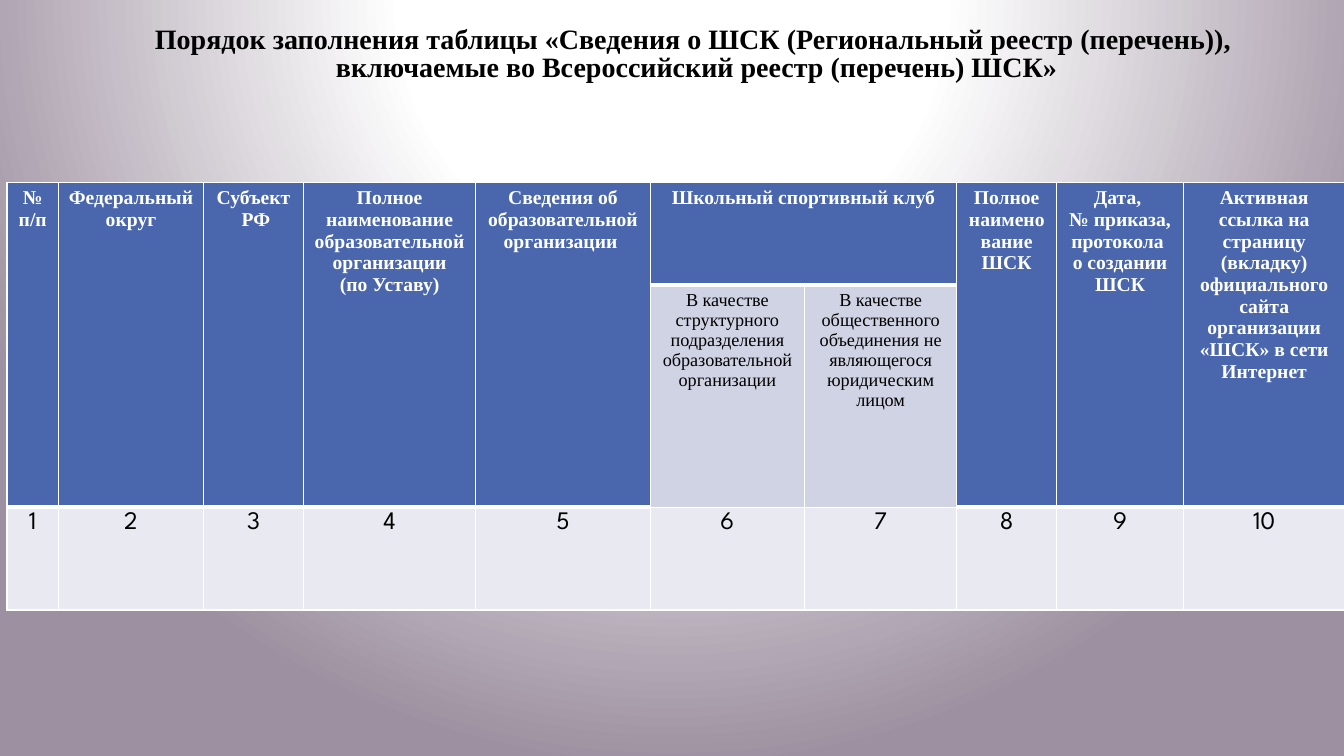
from dataclasses import dataclass

from pptx import Presentation
from pptx.dml.color import RGBColor
from pptx.enum.text import MSO_ANCHOR, MSO_AUTO_SIZE, PP_ALIGN
from pptx.oxml import parse_xml
from pptx.oxml.ns import nsdecls
from pptx.util import Inches, Pt


@dataclass(frozen=True)
class Theme:
    serif: str = "Times New Roman"
    sans: str = "League Spartan"
    black: str = "000000"
    white: str = "FFFFFF"
    mauve: str = "9D90A0"
    header_fill: str = "4A66AC"
    subheader_fill: str = "D0D3E3"
    number_fill: str = "E9EAF1"
    title_size: float = 20
    header_size: float = 14
    subheader_size: float = 13
    number_size: float = 18
    thin: float = 1
    thick: float = 3


THEME = Theme()

TITLE = [
    "Порядок заполнения таблицы «Сведения о ШСК (Региональный реестр (перечень)), ",
    "включаемые во Всероссийский реестр (перечень) ШСК»",
]
COLUMN_WIDTHS = [0.51, 1.44, 0.99, 1.71, 1.73, 1.53, 1.51, 0.99, 1.26, 1.6]
ROW_HEIGHTS = [1.02, 1.87, 1.02]
HEADERS = {
    0: ["№", "п/п"],
    1: ["Федеральный округ"],
    2: ["Субъект", " РФ"],
    3: ["Полное наименование образовательной организации", "(по Уставу)"],
    4: ["Сведения об образовательной организации "],
    5: ["Школьный спортивный клуб"],
    7: ["Полное наименование ШСК"],
    8: ["Дата, ", "№ приказа, протокола ", "о создании ШСК"],
    9: ["Активная ссылка на страницу (вкладку) официального сайта "
        "организации «ШСК» в сети Интернет"],
}
CLUB_KINDS = {
    5: "В качестве структурного подразделения образовательной организации",
    6: "В качестве общественного объединения не являющегося юридическим лицом",
}


def write_text(frame, lines, *, size, font, color, bold=False):
    """Fill a text frame with centred paragraphs and return them."""
    for index, line in enumerate(lines):
        para = frame.paragraphs[0] if index == 0 else frame.add_paragraph()
        para.alignment = PP_ALIGN.CENTER
        span = para.add_run()
        span.text = line
        span.font.size = Pt(size)
        span.font.name = font
        span.font.bold = bold
        span.font.color.rgb = RGBColor.from_string(color)
    return frame.paragraphs


def set_background(page):
    stops = "".join(
        f'<a:gs pos="{position * 1000}"><a:srgbClr val="{color}"/></a:gs>'
        for position, color in [(0, THEME.white), (35, THEME.white), (100, THEME.mauve)]
    )
    page.element.cSld.insert(0, parse_xml(
        f'<p:bg {nsdecls("p", "a")}><p:bgPr><a:gradFill rotWithShape="1">'
        f'<a:gsLst>{stops}</a:gsLst><a:path path="circle">'
        '<a:fillToRect l="50000" t="-80000" r="50000" b="180000"/></a:path>'
        '</a:gradFill><a:effectLst/></p:bgPr></p:bg>'
    ))


def add_title(page):
    box = page.shapes.title
    box.left, box.top = Inches(0), Inches(0.23)
    box.width, box.height = Inches(13.33), Inches(0.65)
    frame = box.text_frame
    frame.word_wrap = True
    frame.auto_size = MSO_AUTO_SIZE.SHAPE_TO_FIT_TEXT
    frame.vertical_anchor = MSO_ANCHOR.TOP
    paras = write_text(frame, TITLE, size=THEME.title_size, font=THEME.serif,
                       color=THEME.black, bold=True)
    for para in paras:
        para.line_spacing = Pt(19.2)
        para.space_before = Pt(0)
        para.space_after = Pt(0.7)
        properties = para._p.get_or_add_pPr()
        properties.set("marL", "0")
        properties.set("indent", str(Inches(0.49)))


def set_borders(cell, *, top, bottom):
    properties = cell._tc.get_or_add_tcPr()
    widths = {"lnL": THEME.thin, "lnR": THEME.thin, "lnT": top, "lnB": bottom}
    for side, width in widths.items():
        properties.append(parse_xml(
            f'<a:{side} {nsdecls("a")} w="{Pt(width)}"><a:solidFill>'
            f'<a:srgbClr val="{THEME.white}"/></a:solidFill></a:{side}>'
        ))


def style_cell(cell, row, column):
    # A heavy rule closes each header: one row deep over the club kinds, else two
    header_depth = 1 if column in CLUB_KINDS else 2
    is_header = row < header_depth
    set_borders(
        cell,
        top=THEME.thick if row == header_depth else THEME.thin,
        bottom=THEME.thick if is_header else THEME.thin,
    )
    if is_header:
        color = THEME.header_fill
    else:
        color = THEME.subheader_fill if row == 1 else THEME.number_fill
    cell.fill.solid()
    cell.fill.fore_color.rgb = RGBColor.from_string(color)


def add_register_table(page):
    table = page.shapes.add_table(
        len(ROW_HEIGHTS), len(COLUMN_WIDTHS), Inches(0.07), Inches(1.81),
        Inches(sum(COLUMN_WIDTHS)), Inches(sum(ROW_HEIGHTS)),
    ).table
    for column, width in zip(table.columns, COLUMN_WIDTHS):
        column.width = Inches(width)
    for row, height in zip(table.rows, ROW_HEIGHTS):
        row.height = Inches(height)
    for row in range(len(ROW_HEIGHTS)):
        for column in range(len(COLUMN_WIDTHS)):
            style_cell(table.cell(row, column), row, column)

    # Header cells
    for column, lines in HEADERS.items():
        cell = table.cell(0, column)
        cell.merge(table.cell(0, 6) if column in CLUB_KINDS else table.cell(1, column))
        write_text(cell.text_frame, lines, size=THEME.header_size,
                   font=THEME.serif, color=THEME.white, bold=True)

    # Kinds of club
    for column, line in CLUB_KINDS.items():
        write_text(table.cell(1, column).text_frame, [line], size=THEME.subheader_size,
                   font=THEME.serif, color=THEME.black)

    # Column numbers
    for column in range(len(COLUMN_WIDTHS)):
        write_text(table.cell(2, column).text_frame, [str(column + 1)],
                   size=THEME.number_size, font=THEME.sans, color=THEME.black)


def main():
    deck = Presentation()
    deck.slide_width, deck.slide_height = Inches(13.33), Inches(7.5)
    page = deck.slides.add_slide(deck.slide_layouts.get_by_name("Title Only"))
    set_background(page)
    add_register_table(page)
    add_title(page)
    deck.save("out.pptx")


if __name__ == "__main__":
    main()
